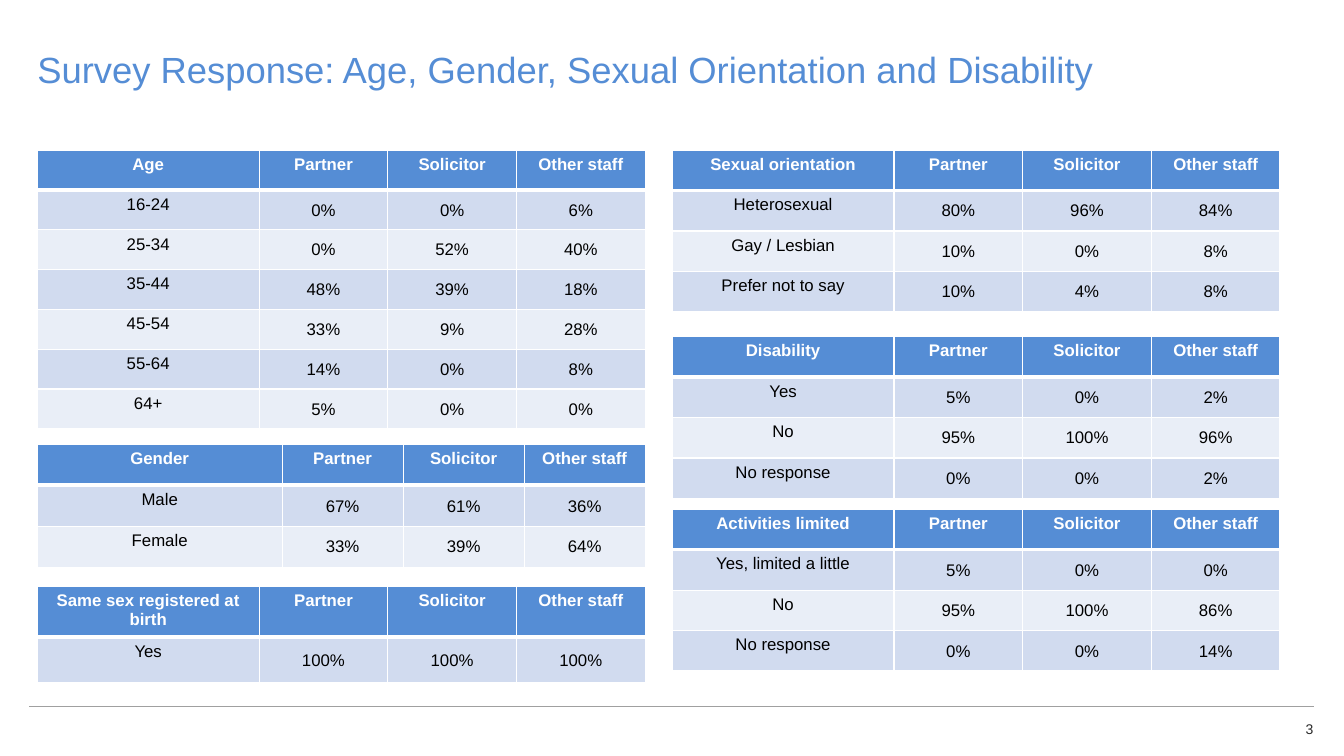
"""Build a survey slide with six response tables."""
from lxml import etree
from pptx import Presentation
from pptx import util as u
from pptx.dml.color import RGBColor
from pptx.enum import shapes, text
from pptx.oxml import ns

TITLE = "Survey Response: Age, Gender, Sexual Orientation and Disability"
PAGE_NUMBER = "3"
GROUPS = ["Partner", "Solicitor", "Other staff"]
FONT = "Arial"
BLUE, WHITE, BLACK = "558DD5", "FFFFFF", "000000"
BANDS = ["D1DBEF", "E9EEF7"]
LEFT, RIGHT, TABLE_WIDTH = 0.94, 16.94, 15.32
LABEL_WIDTH, GENDER_LABEL_WIDTH = 5.59, 6.17

TABLES = [
    ("Age", LEFT, 3.78, LABEL_WIDTH, 1.005, [
        ("16-24", 0, 0, 6),
        ("25-34", 0, 52, 40),
        ("35-44", 48, 39, 18),
        ("45-54", 33, 9, 28),
        ("55-64", 14, 0, 8),
        ("64+", 5, 0, 0),
    ]),
    ("Gender", LEFT, 11.2, GENDER_LABEL_WIDTH, 1.03, [
        ("Male", 67, 61, 36),
        ("Female", 33, 39, 64),
    ]),
    ("Same sex registered at birth", LEFT, 14.78, LABEL_WIDTH, 1.15, [
        ("Yes", 100, 100, 100),
    ]),
    ("Sexual orientation", RIGHT, 3.78, LABEL_WIDTH, 1.02, [
        ("Heterosexual", 80, 96, 84),
        ("Gay / Lesbian", 10, 0, 8),
        ("Prefer not to say", 10, 4, 8),
    ]),
    ("Disability", RIGHT, 8.48, LABEL_WIDTH, 1.02, [
        ("Yes", 5, 0, 2),
        ("No", 95, 100, 96),
        ("No response", 0, 0, 2),
    ]),
    ("Activities limited", RIGHT, 12.83, LABEL_WIDTH, 1.02, [
        ("Yes, limited a little", 5, 0, 0),
        ("No", 95, 100, 86),
        ("No response", 0, 0, 14),
    ]),
]


def color(value):
    return RGBColor.from_string(value)


def write(frame, content, size=12, fill=BLACK, bold=False, align=text.PP_ALIGN.CENTER):
    paragraph = frame.paragraphs[0]
    paragraph.alignment = align
    run = paragraph.add_run()
    run.text = content
    run.font.name, run.font.size, run.font.bold = FONT, u.Pt(size), bold
    run.font.color.rgb = color(fill)
    return paragraph


def clear_margins(frame):
    frame.margin_left = frame.margin_right = frame.margin_top = frame.margin_bottom = 0
    frame.word_wrap = True
    frame.vertical_anchor = text.MSO_ANCHOR.TOP


def add_borders(cell, above, below):
    properties = cell._tc.get_or_add_tcPr()
    for side, width in (("L", 1), ("R", 1), ("T", above), ("B", below)):
        line = etree.SubElement(properties, ns.qn(f"a:ln{side}"), w=str(u.Pt(width)))
        fill = etree.SubElement(line, ns.qn("a:solidFill"))
        etree.SubElement(fill, ns.qn("a:srgbClr"), val=WHITE)


def format_cell(cell, content, row, column):
    header = row == 0
    add_borders(cell, 3 if row == 1 else 1, 3 if header else 1)
    cell.fill.solid()
    cell.fill.fore_color.rgb = color(BLUE if header else BANDS[(row - 1) % 2])
    if not header and column:
        cell.margin_left = cell.margin_right = cell.margin_top = u.Cm(0.02)
        cell.margin_bottom = 0
        cell.vertical_anchor = text.MSO_ANCHOR.MIDDLE
    write(cell.text_frame, content, fill=WHITE if header else BLACK, bold=header)


def add_survey_table(slide, heading, left, top, label_width, row_height, answers):
    rows = [[heading, *GROUPS]]
    rows += [[label, *(f"{value}%" for value in values)] for label, *values in answers]
    table = slide.shapes.add_table(
        len(rows), len(rows[0]), u.Cm(left), u.Cm(top),
        u.Cm(TABLE_WIDTH), u.Cm(row_height * len(rows))).table
    group_width = (TABLE_WIDTH - label_width) / len(GROUPS)
    for index, column in enumerate(table.columns):
        column.width = u.Cm(group_width if index else label_width)
    for row_index, row in enumerate(rows):
        table.rows[row_index].height = u.Cm(row_height)
        for column_index, content in enumerate(row):
            format_cell(table.cell(row_index, column_index), content, row_index, column_index)


def add_title(slide):
    title = slide.shapes.title
    title.left, title.top, title.width, title.height = map(u.Cm, (LEFT, 1.32, 31.98, 1.63))
    clear_margins(title.text_frame)
    title.text_frame.auto_size = text.MSO_AUTO_SIZE.NONE
    paragraph = write(title.text_frame, TITLE, size=26, fill=BLUE, align=text.PP_ALIGN.LEFT)
    paragraph.line_spacing = 0.9


def add_footer(slide):
    rule = slide.shapes.add_connector(
        shapes.MSO_CONNECTOR.STRAIGHT, u.Cm(0.74), u.Cm(17.8), u.Cm(33.12), u.Cm(17.8))
    rule.line.color.rgb = color("A0A0A0")
    rule.line.width = u.Pt(0.75)
    etree.SubElement(rule._element.spPr, ns.qn("a:effectLst"))
    number = slide.shapes.add_textbox(u.Cm(31.83), u.Cm(18.16), u.Cm(1.27), u.Cm(0.51))
    clear_margins(number.text_frame)
    paragraph = write(number.text_frame, PAGE_NUMBER, size=10, fill="2A2A2A",
                      align=text.PP_ALIGN.RIGHT)
    paragraph.space_after = u.Pt(6)


def main():
    presentation = Presentation()
    presentation.slide_width, presentation.slide_height = u.Cm(33.87), u.Cm(19.05)
    slide = presentation.slides.add_slide(presentation.slide_layouts[5])
    add_title(slide)
    add_footer(slide)
    for survey in TABLES:
        add_survey_table(slide, *survey)
    presentation.save("out.pptx")


if __name__ == "__main__":
    main()
